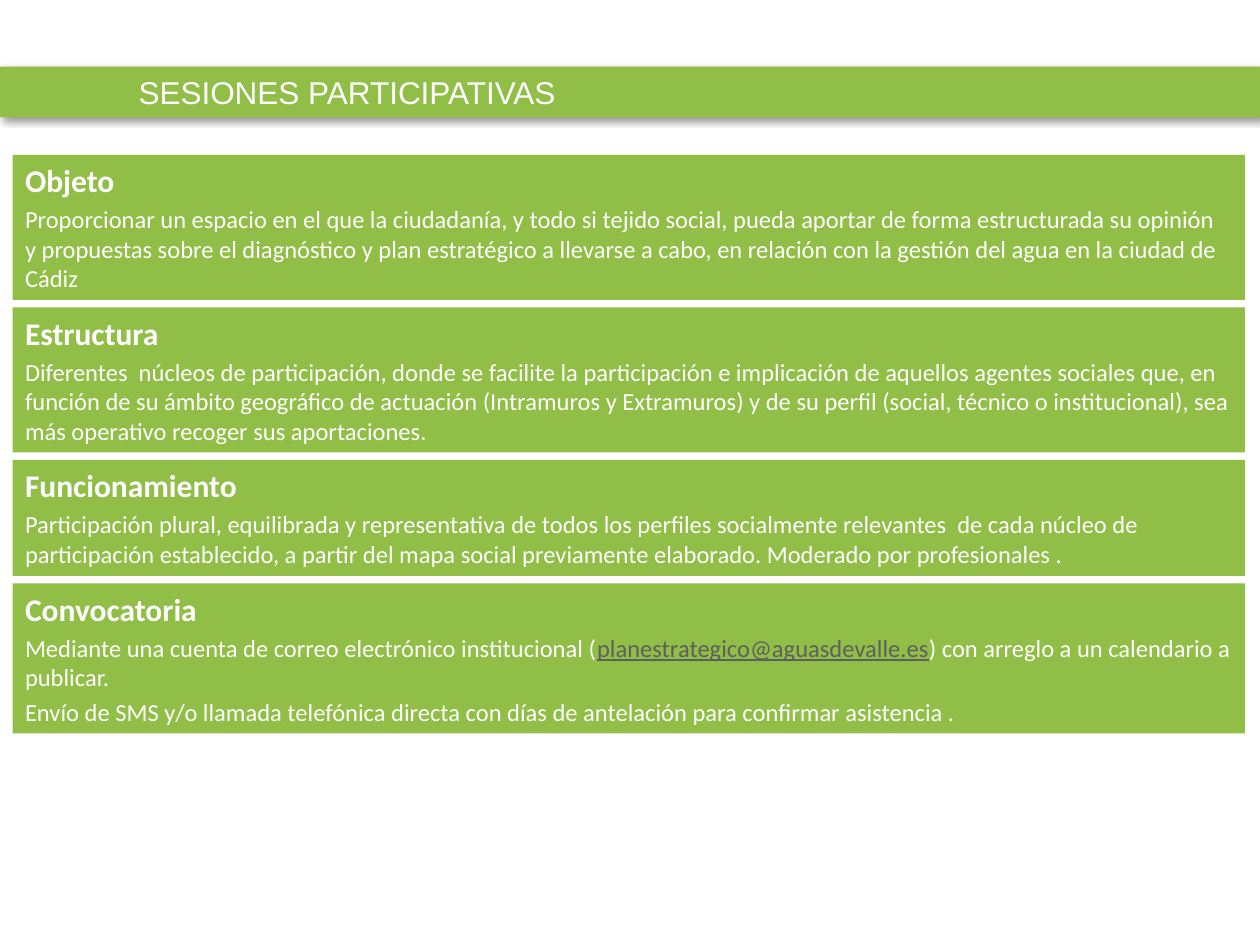
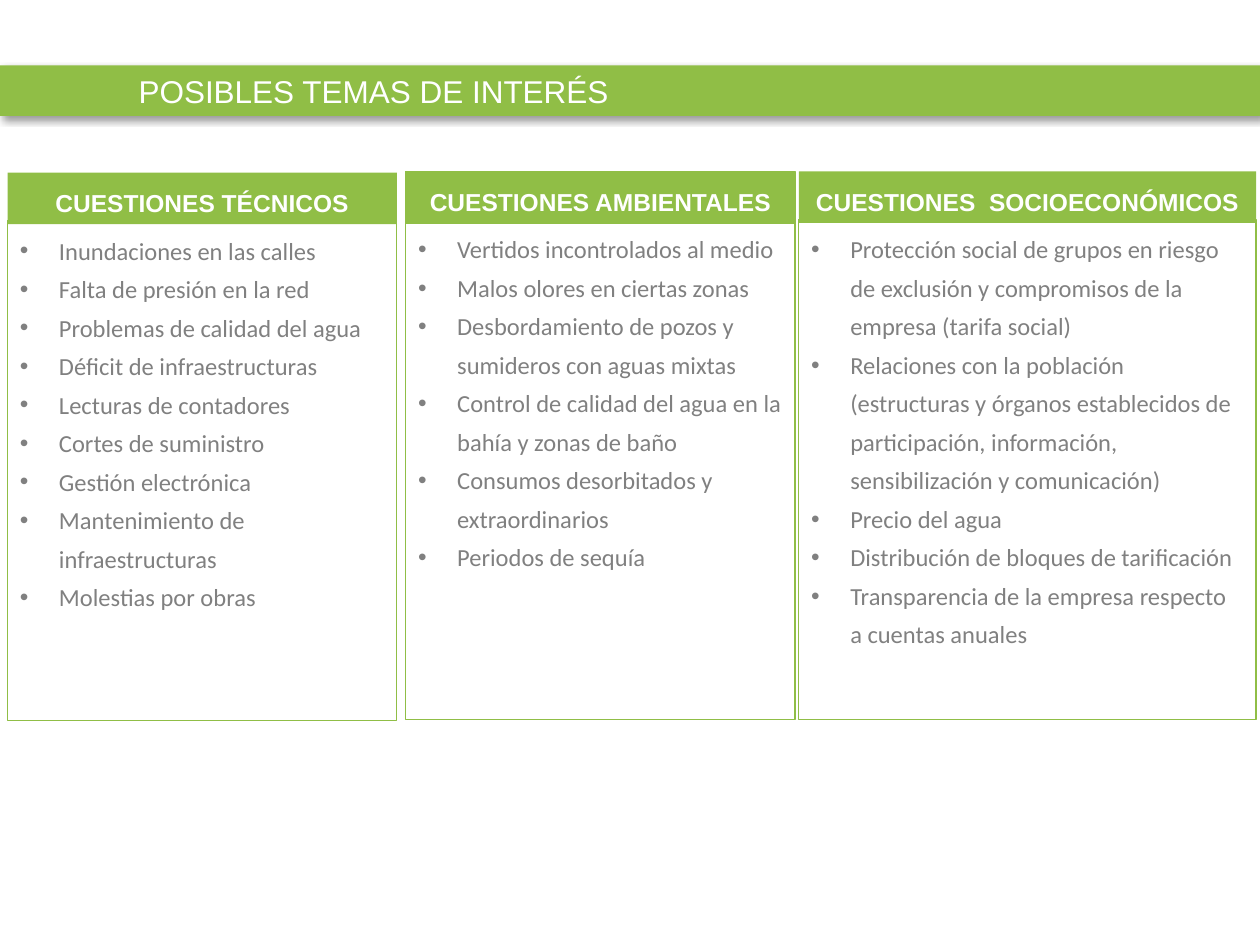
import pptx
import pptx.util
import pptx.dml.color
import pptx.enum.shapes
import pptx.enum.text
import pptx.oxml
import pptx.oxml.ns

Inches = pptx.util.Inches
Pt = pptx.util.Pt
ALIGN = pptx.enum.text.PP_ALIGN
GREEN, WHITE, GREY, LINK = "90BE46", "FFFFFF", "808080", "5F5F5F"

BLOCKS = [
    (1.15, "Objeto", [
        "Proporcionar un espacio en el que la ciudadanía, y todo si tejido social, pueda aportar de "
        "forma estructurada su opinión y propuestas sobre el diagnóstico y plan estratégico a "
        "llevarse a cabo, en relación con la gestión del agua en la ciudad de Cádiz"]),
    (1.15, "Estructura", [
        "Diferentes  núcleos de participación, donde se facilite la participación e implicación de "
        "aquellos agentes sociales que, en función de su ámbito geográfico de actuación (Intramuros "
        "y Extramuros) y de su perfil (social, técnico o institucional), sea más operativo recoger "
        "sus aportaciones."]),
    (0.92, "Funcionamiento", [
        "Participación plural, equilibrada y representativa de todos los perfiles socialmente "
        "relevantes  de cada núcleo de participación establecido, a partir del mapa social "
        "previamente elaborado. Moderado por profesionales ."]),
    (1.19, "Convocatoria", [
        ["Mediante una cuenta de correo electrónico institucional (",
         ("planestrategico@aguasdevalle.es", {"color": LINK, "under": True}),
         ") con arreglo a un calendario a publicar."],
        "Envío de SMS y/o llamada telefónica directa con días de antelación para confirmar "
        "asistencia ."]),
]

TOPICS = [
    (0.06, 1.37, 3.09, None, "CUESTIONES TÉCNICOS", [
        "Inundaciones en las calles", "Falta de presión en la red",
        "Problemas de calidad del agua", "Déficit de infraestructuras",
        "Lecturas de contadores", "Cortes de suministro", "Gestión electrónica",
        "Mantenimiento de infraestructuras", "Molestias por obras"]),
    (3.22, 1.36, 3.09, GREEN, "CUESTIONES AMBIENTALES", [
        "Vertidos incontrolados al medio", "Malos olores en ciertas zonas",
        "Desbordamiento de pozos y sumideros con aguas mixtas",
        "Control de calidad del agua en la bahía y zonas de baño",
        "Consumos desorbitados y extraordinarios", "Periodos de sequía"]),
    (6.34, 1.36, 3.63, None, "CUESTIONES  SOCIOECONÓMICOS", [
        "Protección social de grupos en riesgo de exclusión y compromisos de la empresa "
        "(tarifa social)",
        "Relaciones con la población (estructuras y órganos establecidos de participación, "
        "información, sensibilización y comunicación)",
        "Precio del agua", "Distribución de bloques de tarificación",
        "Transparencia de la empresa respecto a cuentas anuales"]),
]


def rgb(code):
    """Turn a hex string into a colour."""
    return pptx.dml.color.RGBColor.from_string(code)


def add_box(slide, x, y, w, h, fill=None, line=None):
    """Draw a rectangle ready for top-left text."""
    box = slide.shapes.add_shape(pptx.enum.shapes.MSO_SHAPE.RECTANGLE,
                                 Inches(x), Inches(y), Inches(w), Inches(h))
    box.shadow.inherit = False
    if fill:
        box.fill.solid()
        box.fill.fore_color.rgb = rgb(fill)
    else:
        box.fill.background()
    if line:
        box.line.color.rgb = rgb(line)
        box.line.width = Pt(0.75)
    else:
        box.line.fill.background()
    box.text_frame.word_wrap = True
    box.text_frame.vertical_anchor = pptx.enum.text.MSO_ANCHOR.TOP
    return box


def add_bullet(para):
    """Give a paragraph a hanging round bullet."""
    props = para._p.get_or_add_pPr()
    props.set("marL", str(Inches(0.31)))
    props.set("indent", str(-Inches(0.31)))
    for tag, name, value in (("buFont", "typeface", "Arial"), ("buChar", "char", "•")):
        mark = pptx.oxml.ns.qn("a:" + tag)
        props.append(props.makeelement(mark, {name: value}))


def write(box, text, size=14, font="Calibri", color=WHITE, bold=False,
          align=ALIGN.LEFT, before=None, pitch=None, bullet=False):
    """Add one paragraph, given as a string or a list of runs."""
    frame = box.text_frame
    first = not frame.paragraphs[0].runs
    para = frame.paragraphs[0] if first else frame.add_paragraph()
    para.alignment = align
    if pitch:
        para.line_spacing = Pt(pitch)
    if before and not first:
        para.space_before = Pt(before)
    if bullet:
        add_bullet(para)
    for part in [text] if isinstance(text, str) else text:
        words, style = (part, {}) if isinstance(part, str) else part
        run = para.add_run()
        run.text = words
        run.font.size = Pt(size)
        run.font.name = font
        run.font.bold = bold
        run.font.underline = style.get("under", False)
        run.font.color.rgb = rgb(style.get("color", color))


def add_shade(shape, blur=4, dist=3, angle=45, alpha=40):
    """Give a shape a soft black shadow."""
    old = shape._element.spPr.find(pptx.oxml.ns.qn("a:effectLst"))
    old.append(pptx.oxml.parse_xml(
        f'<a:outerShdw {pptx.oxml.ns.nsdecls("a")} blurRad="{Pt(blur)}" dist="{Pt(dist)}" '
        f'dir="{angle * 60000}" algn="tl" rotWithShape="0"><a:srgbClr val="000000">'
        f'<a:alpha val="{alpha * 1000}"/></a:srgbClr></a:outerShdw>'))


def add_title(slide, text, y):
    """Draw the full-width title band."""
    band = add_box(slide, 0, y, 10, 0.4, fill=GREEN)
    band.text_frame.margin_left = Inches(1.1)
    add_shade(band)
    write(band, text, size=18, font="Arial")


def add_blocks(slide, x, y, w, gap=0.06):
    """Stack the headed text blocks."""
    for h, head, lines in BLOCKS:
        box = add_box(slide, x, y, w, h, fill=GREEN)
        write(box, head, size=18, bold=True)
        for line in lines:
            write(box, line, before=3)
        y += h + gap


def add_topic(slide, x, y, w, edge, head, items):
    """Draw a topic column: header above a bulleted body."""
    top = add_box(slide, x, y, w, 0.41, fill=GREEN, line=edge)
    write(top, head, font="Arial", bold=True, align=ALIGN.CENTER, pitch=22)
    body = add_box(slide, x, y + 0.38, w, 3.97, line=GREEN)
    for item in items:
        write(body, item, color=GREY, pitch=22, bullet=True)


def main():
    """Build and save both slides."""
    deck = pptx.Presentation()
    deck.slide_width, deck.slide_height = Inches(10), Inches(7.5)
    blank = deck.slide_layouts[6]
    slide = deck.slides.add_slide(blank)
    add_title(slide, "SESIONES PARTICIPATIVAS", 0.53)
    add_blocks(slide, 0.1, 1.23, 9.78)
    slide = deck.slides.add_slide(blank)
    add_title(slide, "POSIBLES TEMAS DE INTERÉS", 0.52)
    for topic in TOPICS:
        add_topic(slide, *topic)
    deck.save("out.pptx")


if __name__ == "__main__":
    main()
